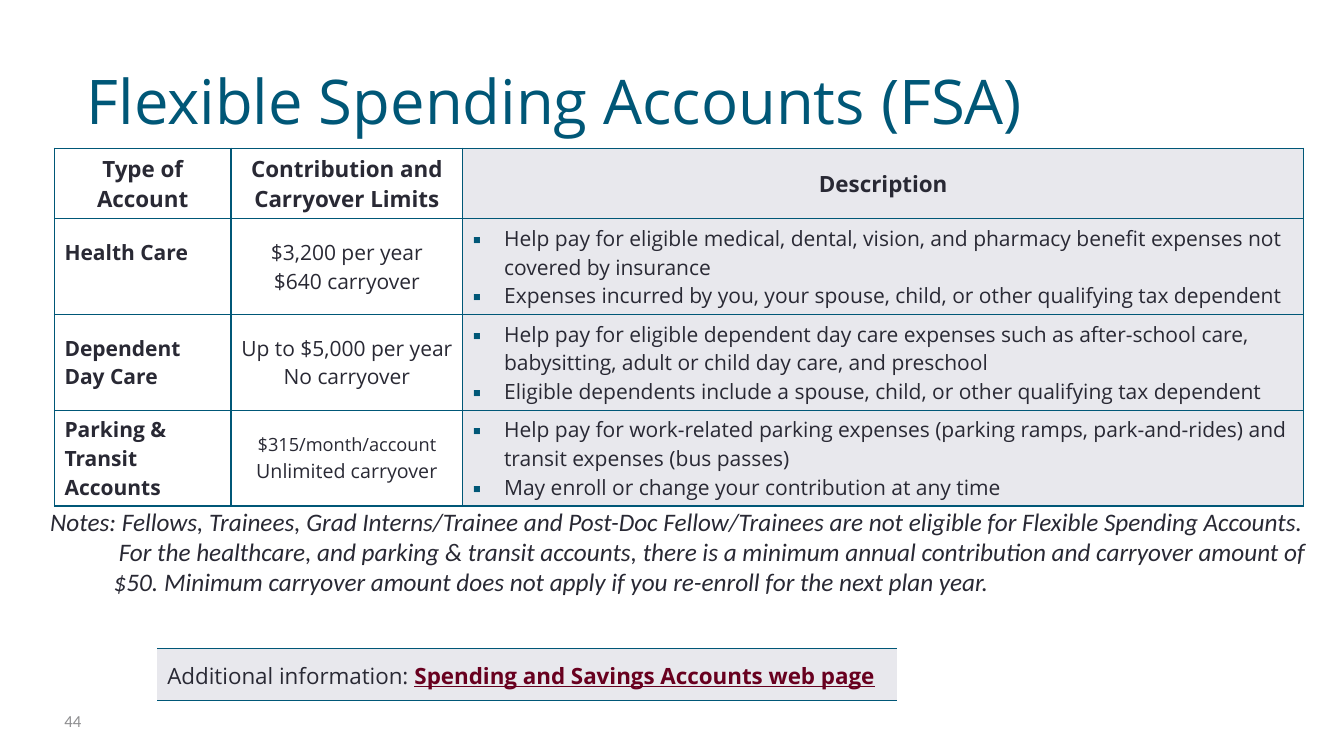
"""Build the Flexible Spending Accounts slide."""
from dataclasses import dataclass

from lxml import etree
from pptx import Presentation
from pptx.dml.color import RGBColor
from pptx.enum.text import MSO_ANCHOR, PP_ALIGN
from pptx.oxml.ns import qn
from pptx.util import Inches, Pt

LEFT, CENTER = PP_ALIGN.LEFT, PP_ALIGN.CENTER
MIDDLE, BOTTOM = MSO_ANCHOR.MIDDLE, MSO_ANCHOR.BOTTOM
ALL_SIDES = ("L", "R", "T", "B")


@dataclass(frozen=True)
class Theme:
    accent: str = "005777"
    text: str = "292934"
    shade: str = "E8E8ED"
    link: str = "68001F"
    muted: str = "8E8E90"
    font: str = "Open Sans"
    note_font: str = "Calibri"
    title: int = 44
    note: int = 18
    heading: int = 16
    body: int = 15
    limit: int = 14
    small_limit: int = 13
    number: int = 12


class SlideBuilder:
    def __init__(self, slide, theme):
        self.slide = slide
        self.theme = theme

    def style(self, paragraph, size, color=None, font=None, bold=False, italic=False):
        for run in paragraph.runs:
            run.font.name = font or self.theme.font
            run.font.size = Pt(size)
            run.font.bold = bold
            run.font.italic = italic
            run.font.color.rgb = RGBColor.from_string(color or self.theme.text)

    def title(self, text, left, top, width, height):
        shape = self.slide.shapes.title
        shape.left, shape.top = Inches(left), Inches(top)
        shape.width, shape.height = Inches(width), Inches(height)
        shape.text_frame.text = text
        shape.text_frame.vertical_anchor = BOTTOM
        paragraph = shape.text_frame.paragraphs[0]
        paragraph.alignment = LEFT
        self.style(paragraph, self.theme.title, self.theme.accent)

    def text(self, lines, left, top, width, height, size, color, indents=(0,), italic=False):
        shape = self.slide.shapes.add_textbox(Inches(left), Inches(top), Inches(width), Inches(height))
        text_frame = shape.text_frame
        text_frame.word_wrap = True
        text_frame.text = "\n".join(lines)
        for paragraph, indent in zip(text_frame.paragraphs, indents):
            paragraph._p.get_or_add_pPr().set("marL", str(Inches(indent)))
            self.style(paragraph, size, color, self.theme.note_font, italic=italic)
        return text_frame

    def table(self, left, top, column_widths, row_heights):
        frame = self.slide.shapes.add_table(
            len(row_heights), len(column_widths), Inches(left), Inches(top),
            Inches(sum(column_widths)), Inches(sum(row_heights)))
        table = frame.table
        table.first_row = table.horz_banding = False
        for column, width in zip(table.columns, column_widths):
            column.width = Inches(width)
        for row, height in zip(table.rows, row_heights):
            row.height = Inches(height)
        return table

    def cell(self, cell, lines, sizes, bold=False, alignment=LEFT, bullets=False,
             shaded=False, sides=ALL_SIDES):
        self.borders(cell, sides)
        if shaded:
            cell.fill.solid()
            cell.fill.fore_color.rgb = RGBColor.from_string(self.theme.shade)
        else:
            cell.fill.background()
        cell.vertical_anchor = MIDDLE
        cell.text_frame.text = "\n".join(lines)
        for paragraph, size in zip(cell.text_frame.paragraphs, sizes):
            if bullets:
                self.bullet(paragraph)
            paragraph.alignment = alignment
            self.style(paragraph, size, bold=bold)

    def borders(self, cell, sides):
        properties = cell._tc.get_or_add_tcPr()
        for side in ALL_SIDES:
            line = etree.SubElement(properties, qn(f"a:ln{side}"), w=str(Pt(1)))
            if side in sides:
                fill = etree.SubElement(line, qn("a:solidFill"))
                etree.SubElement(fill, qn("a:srgbClr"), val=self.theme.accent)
            else:
                etree.SubElement(line, qn("a:noFill"))

    def bullet(self, paragraph):
        properties = paragraph._p.get_or_add_pPr()
        properties.set("marL", str(Inches(0.31)))
        properties.set("indent", str(Inches(-0.31)))
        color = etree.SubElement(properties, qn("a:buClr"))
        etree.SubElement(color, qn("a:srgbClr"), val=self.theme.accent)
        etree.SubElement(properties, qn("a:buFont"), typeface=self.theme.font)
        etree.SubElement(properties, qn("a:buChar"), char="▪")


HEADINGS = (["Type of Account"], ["Contribution and", "Carryover Limits"], ["Description"])
ACCOUNTS = (
    ("Health Care", ["$3,200 per year", "$640 carryover"],
     ["Help pay for eligible medical, dental, vision, and pharmacy benefit expenses not covered by insurance",
      "Expenses incurred by you, your spouse, child, or other qualifying tax dependent"]),
    ("Dependent Day Care", ["Up to $5,000 per year", "No carryover"],
     ["Help pay for eligible dependent day care expenses such as after-school care, babysitting, "
      "adult or child day care, and preschool",
      "Eligible dependents include a spouse, child, or other qualifying tax dependent"]),
    ("Parking & Transit Accounts", ["$315/month/account", "Unlimited carryover"],
     ["Help pay for work-related parking expenses (parking ramps, park-and-rides) and transit expenses (bus passes)",
      "May enroll or change your contribution at any time"]),
)
NOTES = (
    "Notes: Fellows, Trainees, Grad Interns/Trainee and Post-Doc Fellow/Trainees are not eligible "
    "for Flexible Spending Accounts.",
    "For the healthcare, and parking & transit accounts, there is a minimum annual contribution "
    "and carryover amount of",
    "$50. Minimum carryover amount does not apply if you re-enroll for the next plan year.",
)


def main():
    theme = Theme()
    presentation = Presentation()
    presentation.slide_width, presentation.slide_height = Inches(13.33), Inches(7.5)
    slide = presentation.slides.add_slide(presentation.slide_layouts[5])
    builder = SlideBuilder(slide, theme)

    number = builder.text(["44"], 0.54, 6.95, 0.56, 0.4, theme.number, theme.muted)
    number.vertical_anchor = MIDDLE
    builder.title("Flexible Spending Accounts (FSA)", 0.76, 0.16, 11.94, 1.25)

    information = builder.table(1.56, 6.43, [7.34], [0.52]).cell(0, 0)
    builder.cell(information, ["Additional information: "], [theme.heading], shaded=True, sides=("T", "B"))
    paragraph = information.text_frame.paragraphs[0]
    paragraph.line_spacing = 1.1
    link = paragraph.add_run()
    link.text = "Spending and Savings Accounts web page"
    link.font.name, link.font.size = theme.font, Pt(theme.heading)
    link.font.bold = link.font.underline = True
    link.font.color.rgb = RGBColor.from_string(theme.link)

    accounts = builder.table(0.54, 1.47, [1.75, 2.3, 8.34], [0.7] + [0.95] * 3)
    for column, lines in enumerate(HEADINGS):
        builder.cell(accounts.cell(0, column), lines, [theme.heading] * 2, bold=True,
                     alignment=CENTER, shaded=column == 2)
    body_sizes = [theme.body] * 2
    limit_sizes = (body_sizes, body_sizes, [theme.small_limit, theme.limit])
    for row, ((name, limits, description), sizes) in enumerate(zip(ACCOUNTS, limit_sizes), start=1):
        builder.cell(accounts.cell(row, 0), [name], body_sizes, bold=True)
        builder.cell(accounts.cell(row, 1), limits, sizes, alignment=CENTER)
        builder.cell(accounts.cell(row, 2), description, body_sizes, bullets=True, shaded=True)
    accounts.cell(1, 0).margin_bottom = Inches(0.34)

    builder.text(NOTES, 0.4, 4.97, 12.7, 1.01, theme.note, theme.text,
                 indents=(0, 0.68, 0.63), italic=True)
    presentation.save("out.pptx")


if __name__ == "__main__":
    main()
